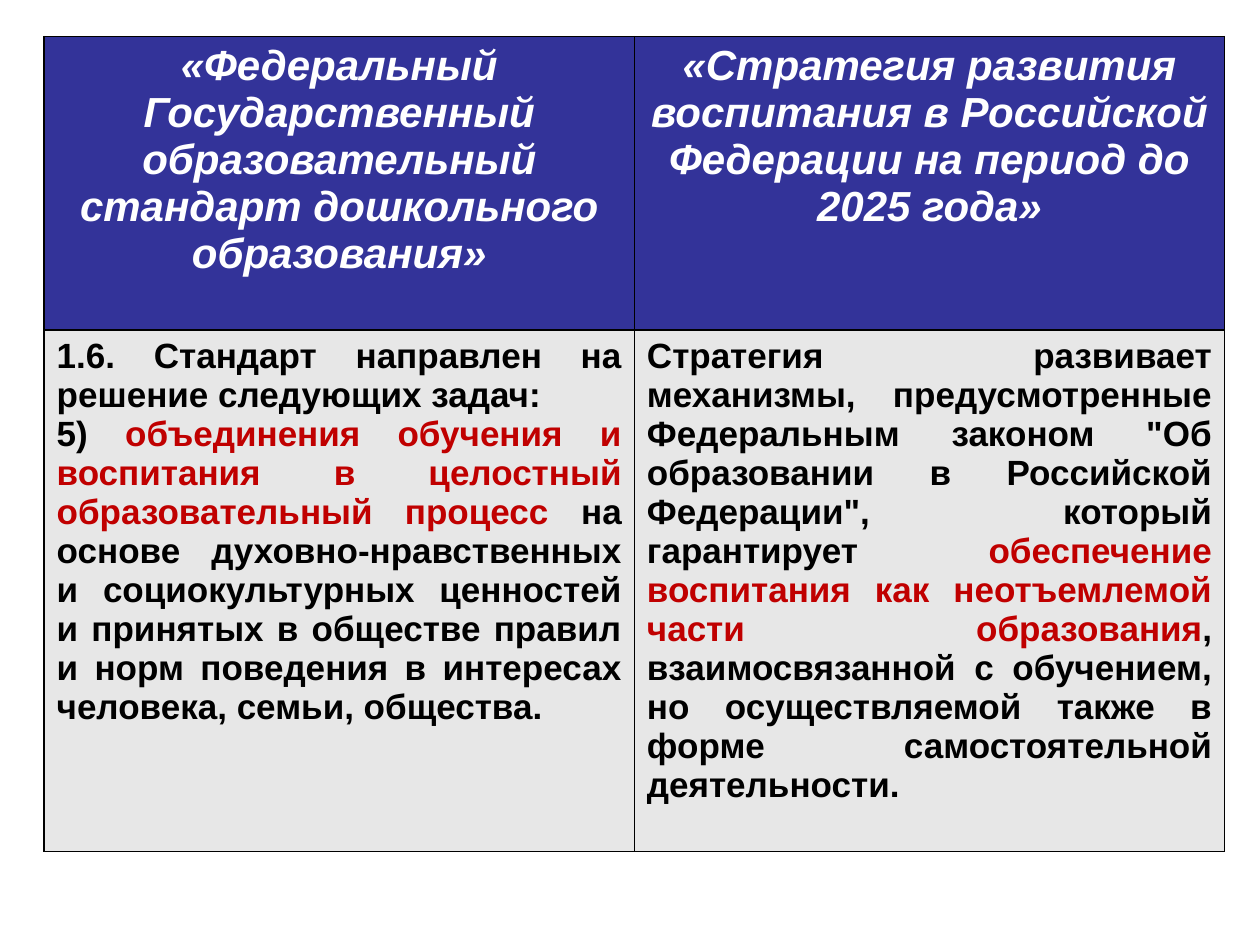
from dataclasses import dataclass

from lxml.etree import SubElement
from pptx import Presentation
from pptx.dml.color import RGBColor as Color
from pptx.enum.text import PP_ALIGN as Align
from pptx.oxml.ns import qn
from pptx.util import Inches, Pt


@dataclass(frozen=True)
class Theme:
    font: str = "Arial"
    header_size: int = 24
    body_size: int = 20
    header_text: str = "FFFFFF"
    header_fill: str = "333399"
    body_text: str = "000000"
    body_fill: str = "E7E7E7"
    accent: str = "C00000"
    border: str = "000000"


THEME = Theme()

HEADERS = [
    "«Федеральный Государственный образовательный стандарт дошкольного образования»",
    "«Стратегия развития воспитания в Российской Федерации на период до 2025 года»",
]
STANDARD = [
    [("1.6. Стандарт направлен на решение следующих задач:", THEME.body_text)],
    [
        ("5) ", THEME.body_text),
        ("объединения обучения и воспитания в целостный образовательный процесс ", THEME.accent),
        ("на основе духовно-нравственных и социокультурных ценностей и принятых в обществе "
         "правил и норм поведения в интересах человека, семьи, общества.", THEME.body_text),
    ],
]
STRATEGY = [
    [
        ("Стратегия развивает механизмы, предусмотренные Федеральным законом "
         "\"Об образовании в Российской Федерации\", который гарантирует ", THEME.body_text),
        ("обеспечение воспитания как неотъемлемой части образования", THEME.accent),
        (", взаимосвязанной с обучением, но осуществляемой также в форме "
         "самостоятельной деятельности.", THEME.body_text),
    ],
]


def add_borders(cell):
    properties = cell._tc.get_or_add_tcPr()
    for position, side in enumerate(("a:lnL", "a:lnR", "a:lnT", "a:lnB")):
        line = SubElement(properties, qn(side), w=str(Pt(1)))
        fill = SubElement(line, qn("a:solidFill"))
        SubElement(fill, qn("a:srgbClr"), val=THEME.border)
        properties.remove(line)
        properties.insert(position, line)


def fill_cell(cell, paragraphs, fill, size, align, italic=False):
    cell.fill.solid()
    cell.fill.fore_color.rgb = Color.from_string(fill)
    add_borders(cell)
    frame = cell.text_frame
    for index, spans in enumerate(paragraphs):
        para = frame.add_paragraph() if index else frame.paragraphs[0]
        para.alignment = align
        for text, color in spans:
            span = para.add_run()
            span.text = text
            span.font.name = THEME.font
            span.font.size = Pt(size)
            span.font.bold = True
            span.font.italic = italic
            span.font.color.rgb = Color.from_string(color)


def add_comparison(page, left, top, width, row_heights):
    columns = list(zip(HEADERS, (STANDARD, STRATEGY)))
    table = page.shapes.add_table(
        len(row_heights), len(columns), left, top, width, sum(row_heights)
    ).table
    for row, height in zip(table.rows, row_heights):
        row.height = height
    for index, (header, body) in enumerate(columns):
        fill_cell(table.cell(0, index), [[(header, THEME.header_text)]],
                  THEME.header_fill, THEME.header_size, Align.CENTER, italic=True)
        fill_cell(table.cell(1, index), body,
                  THEME.body_fill, THEME.body_size, Align.JUSTIFY)


def main():
    deck = Presentation()
    deck.slide_width, deck.slide_height = Inches(10), Inches(7.5)
    page = deck.slides.add_slide(deck.slide_layouts[6])
    add_comparison(page, Inches(0.35), Inches(0.29), Inches(9.37),
                   [Inches(2.33), Inches(4.14)])
    deck.save("out.pptx")


if __name__ == "__main__":
    main()
